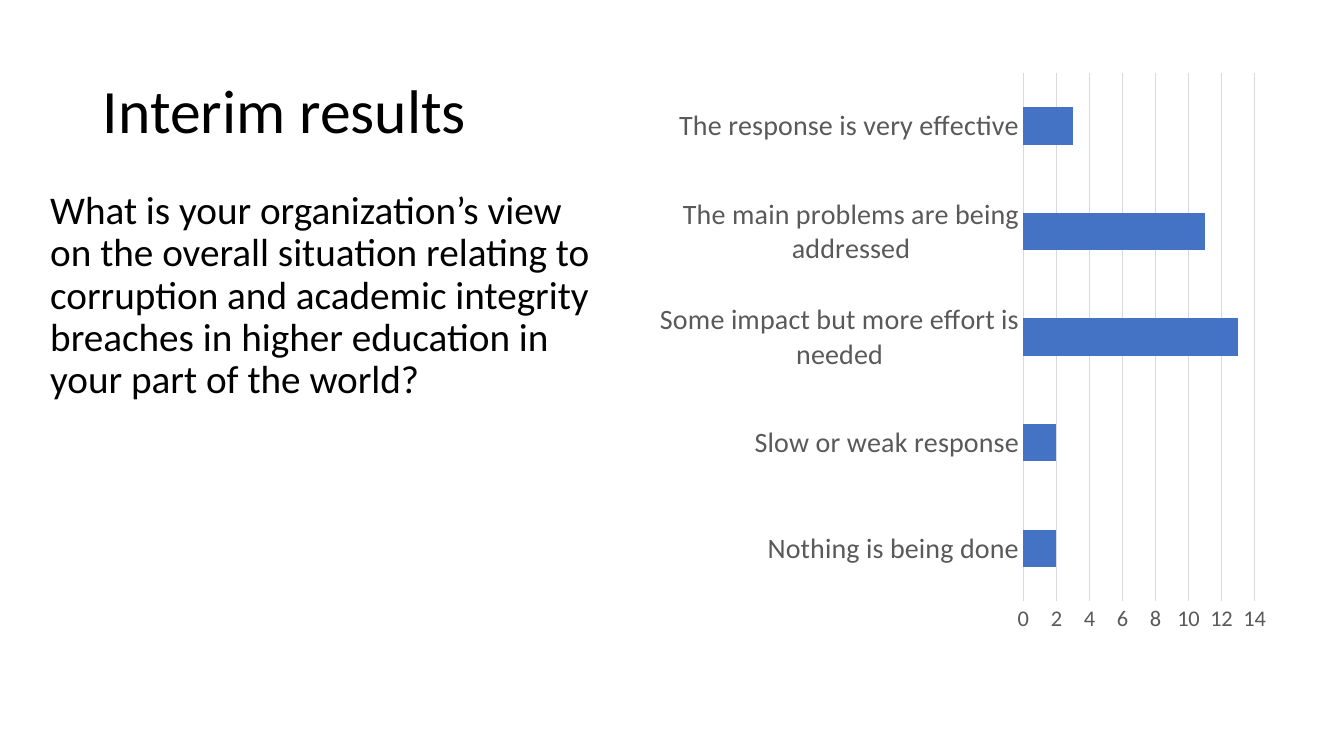
from pptx import Presentation
from pptx.chart.data import CategoryChartData
from pptx.dml.color import RGBColor
from pptx.enum.chart import XL_CHART_TYPE, XL_TICK_MARK
from pptx.enum.text import MSO_ANCHOR, PP_ALIGN
from pptx.util import Inches, Pt

BAR_CLUSTERED = XL_CHART_TYPE.BAR_CLUSTERED
NO_TICKS = XL_TICK_MARK.NONE
TOP, MIDDLE = MSO_ANCHOR.TOP, MSO_ANCHOR.MIDDLE
LEFT = PP_ALIGN.LEFT

BLACK = RGBColor(0x00, 0x00, 0x00)
GRAY = RGBColor(0x59, 0x59, 0x59)
LIGHT_GRAY = RGBColor(0xD9, 0xD9, 0xD9)
BLUE = RGBColor(0x44, 0x72, 0xC4)
FONT = "Calibri"
TITLE_ONLY = 5

# Left, top, width and height in inches
TITLE_BOX = (0.92, 0.4, 3.95, 1.45)
QUESTION_BOX = (0.4, 1.84, 5.63, 2.88)
CHART_BOX = (6.42, 0.61, 6.26, 5.78)

QUESTION = (
    "What is your organization’s view on the overall situation relating to "
    "corruption and academic integrity breaches in higher education in "
    "your part of the world?"
)
ANSWERS = {
    "Nothing is being done": 2,
    "Slow or weak response": 2,
    "Some impact but more effort is needed": 13,
    "The main problems are being addressed": 11,
    "The response is very effective": 3,
}


def to_lengths(box):
    return [Inches(value) for value in box]


def style_font(font, size, color):
    font.name = FONT
    font.size = Pt(size)
    font.bold = False
    font.color.rgb = color


def style_line(line):
    line.color.rgb = LIGHT_GRAY
    line.width = Pt(0.75)


def fill_text(shape, box, text, size, anchor):
    shape.left, shape.top, shape.width, shape.height = to_lengths(box)
    text_frame = shape.text_frame
    text_frame.text = text
    text_frame.word_wrap = True
    text_frame.vertical_anchor = anchor
    paragraph = text_frame.paragraphs[0]
    paragraph.alignment = LEFT
    paragraph.line_spacing = 0.9
    style_font(paragraph.runs[0].font, size, BLACK)


def style_axis(axis, size):
    axis.major_tick_mark = NO_TICKS
    axis.minor_tick_mark = NO_TICKS
    style_font(axis.tick_labels.font, size, GRAY)


def add_answer_chart(slide):
    chart_data = CategoryChartData()
    chart_data.categories = list(ANSWERS)
    chart_data.add_series("Series 1", list(ANSWERS.values()))
    chart = slide.shapes.add_chart(
        BAR_CLUSTERED, *to_lengths(CHART_BOX), chart_data
    ).chart
    chart.has_legend = False
    chart.has_title = False
    style_font(chart.font, 10, BLACK)

    # Bars
    plot = chart.plots[0]
    plot.gap_width = 182
    plot.vary_by_categories = False
    bar_fill = plot.series[0].format.fill
    bar_fill.solid()
    bar_fill.fore_color.rgb = BLUE

    # Axes and gridlines
    style_axis(chart.category_axis, 20)
    style_line(chart.category_axis.format.line)
    value_axis = chart.value_axis
    style_axis(value_axis, 16)
    value_axis.minimum_scale = 0
    value_axis.maximum_scale = 14
    value_axis.major_unit = 2
    value_axis.format.line.fill.background()
    value_axis.has_major_gridlines = True
    style_line(value_axis.major_gridlines.format.line)


def main():
    presentation = Presentation()
    presentation.slide_width = Inches(13.33)
    presentation.slide_height = Inches(7.5)
    slide = presentation.slides.add_slide(presentation.slide_layouts[TITLE_ONLY])

    # Title and question on the left
    fill_text(slide.shapes.title, TITLE_BOX, "Interim results", 44, MIDDLE)
    question = slide.shapes.add_textbox(*to_lengths(QUESTION_BOX))
    fill_text(question, QUESTION_BOX, QUESTION, 28, TOP)

    # Answers on the right
    add_answer_chart(slide)
    presentation.save("out.pptx")


if __name__ == "__main__":
    main()
